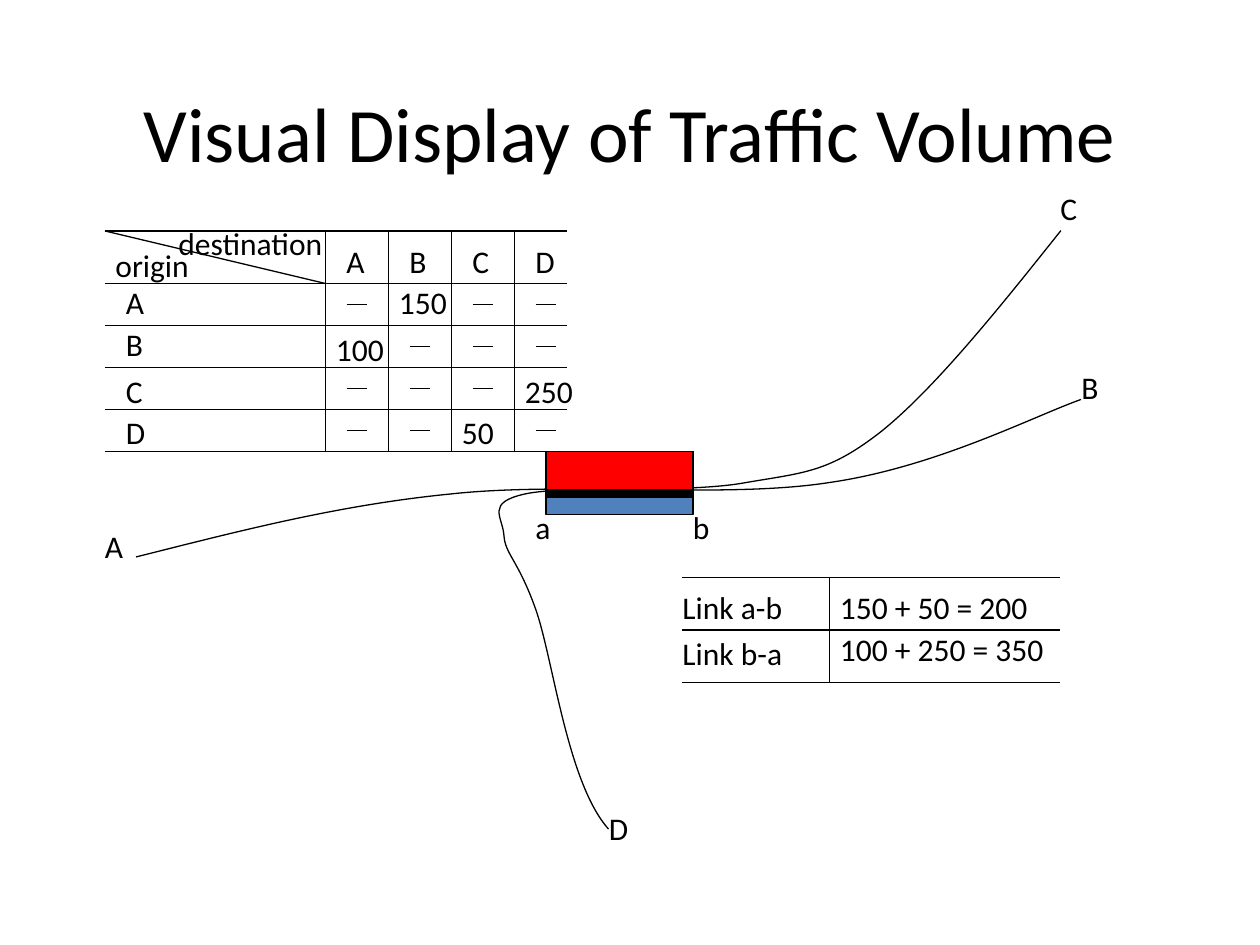
from lxml.etree import SubElement
from pptx import Presentation
from pptx.dml.color import RGBColor
from pptx.enum.shapes import MSO_CONNECTOR as Connector, MSO_SHAPE as Shape
from pptx.enum.text import MSO_ANCHOR as Anchor, MSO_AUTO_SIZE as AutoSize, PP_ALIGN as Align
from pptx.oxml.ns import qn
from pptx.util import Inches, Pt

COLORS = {"ink": "000000", "a_to_b": "4F81BD", "b_to_a": "FF0000"}
FONT = "Calibri"
ZONES = "ABCD"

# Trips by origin row; None is drawn as a dash
TRIPS = [
    [None, 150, None, None],
    [100, None, None, None],
    [None, None, None, 250],
    [None, None, 50, None],
]
LINK_VOLUMES = [
    ("Link a-b", 4.67, "150 + 50 = 200", 4.67),
    ("Link b-a", 5.03, "100 + 250 = 350", 5),
]
# Routes: a start point, then cubic segments (two controls and an end)
ROUTE_A_B = [
    (1.08, 4.42),
    (1.88, 4.22), (2.67, 4.01), (3.58, 3.92),
    (4.5, 3.82), (5.75, 3.96), (6.58, 3.83),
    (7.42, 3.71), (8.19, 3.31), (8.58, 3.17),
]
ROUTE_C_D = [
    (8.42, 1.83),
    (7.92, 2.46), (7.42, 3.08), (7, 3.42),
    (6.58, 3.75), (6.39, 3.75), (5.92, 3.83),
    (5.44, 3.92), (4.49, 3.85), (4.17, 3.92),
    (3.85, 3.99), (3.99, 4.1), (4, 4.25),
    (4.01, 4.4), (4.11, 4.44), (4.25, 4.83),
    (4.39, 5.22), (4.5, 6.21), (4.83, 6.58),
]
# Place labels: text, left, top, height
PLACES = [
    ("A", 0.83, 4.18, 0.4), ("B", 8.58, 2.92, 0.4),
    ("C", 8.42, 1.5, 0.4), ("D", 4.83, 6.42, 0.4),
    ("a", 4.25, 4.03, 0.3), ("b", 5.5, 4.03, 0.3),
]


def rgb(name):
    return RGBColor.from_string(COLORS[name])


def on_grid(length):
    """Snap a length in inches to the drawing grid of a twelfth of an inch."""
    return Inches(round(length * 12) / 12)


def set_line(line, width=0.75):
    line.color.rgb = rgb("ink")
    line.width = Pt(width)


def add_run(paragraph, text, size):
    run = paragraph.add_run()
    run.text = text
    run.font.name = FONT
    run.font.size = Pt(size)
    run.font.color.rgb = rgb("ink")


def add_title(slide, text):
    title = slide.shapes.add_textbox(Inches(0.75), Inches(0.42), Inches(8.5), Inches(1.25))
    frame = title.text_frame
    frame.word_wrap = True
    frame.vertical_anchor = Anchor.MIDDLE
    frame.paragraphs[0].alignment = Align.CENTER
    add_run(frame.paragraphs[0], text, 44)


def add_label(slide, text, left, top, width=0.5, height=0.3):
    label = slide.shapes.add_textbox(on_grid(left), Inches(top), Inches(width), Inches(height))
    frame = label.text_frame
    frame.word_wrap = True
    frame.auto_size = AutoSize.SHAPE_TO_FIT_TEXT
    frame.margin_left = frame.margin_right = frame.margin_top = frame.margin_bottom = 0
    add_run(frame.paragraphs[0], text, 18)


def add_rule(slide, x1, y1, x2, y2, width=0.75):
    ends = [on_grid(value) for value in (x1, y1, x2, y2)]
    rule = slide.shapes.add_connector(Connector.STRAIGHT, *ends)
    set_line(rule.line, width)
    SubElement(rule._element.spPr, qn("a:effectLst"))


def add_route(slide, route):
    start, *points = [(Inches(x), Inches(y)) for x, y in route]
    builder = slide.shapes.build_freeform(*start)
    builder.add_line_segments(points, close=False)
    curve = builder.convert_to_shape()
    curve.shadow.inherit = False
    curve.fill.background()
    set_line(curve.line)

    # Join every three points into one cubic segment
    outline = next(curve._element.iter(qn("a:path")))
    steps = outline.findall(qn("a:lnTo"))
    for i in range(0, len(steps), 3):
        segment = SubElement(outline, qn("a:cubicBezTo"))
        for step in steps[i:i + 3]:
            segment.append(step[0])
            outline.remove(step)


def add_volume_bar(slide, top, height, color):
    bar = slide.shapes.add_shape(
        Shape.RECTANGLE, on_grid(4.33), on_grid(top), on_grid(1.17), on_grid(height))
    bar.shadow.inherit = False
    bar.fill.solid()
    bar.fill.fore_color.rgb = rgb(color)
    set_line(bar.line)


def add_trip_matrix(slide):
    left, right, top, bottom = 0.83, 4.5, 1.83, 3.58
    columns = [2.58 + 0.5 * i for i in range(4)]
    rows = [2.25 + i / 3 for i in range(4)]

    # Grid and split header cell
    for y in [top, *rows, bottom]:
        add_rule(slide, left, y, right, y)
    for x in columns:
        add_rule(slide, x, top, x, bottom)
    add_rule(slide, left, top, columns[0], rows[0])
    add_label(slide, "origin", 0.92, 1.95, 0.67)
    add_label(slide, "destination", 1.42, 1.78, 1.25)

    # Zone headings
    row_label_tops = [2.25, 2.58, 2.95, 3.28]
    for zone, x, y in zip(ZONES, columns, row_label_tops):
        add_label(slide, zone, x + 0.17, 1.92)
        add_label(slide, zone, 1, y)

    # Trips
    trip_tops = [2.25, 2.62, 2.95, 3.28]
    for trips, row, trip_top in zip(TRIPS, rows, trip_tops):
        for trip, x in zip(trips, columns):
            if trip is None:
                add_rule(slide, x + 0.17, row + 0.17, x + 0.34, row + 0.17)
            else:
                add_label(slide, str(trip), x + 0.09, trip_top)


def add_link_totals(slide):
    for y in (4.58, 5, 5.42):
        add_rule(slide, 5.42, y, 8.42, y)
    add_rule(slide, 6.58, 4.58, 6.58, 5.42)
    for link, link_top, total, total_top in LINK_VOLUMES:
        add_label(slide, link, 5.42, link_top, 1.25)
        add_label(slide, total, 6.67, total_top, 1.75)


def main():
    deck = Presentation()
    deck.slide_width, deck.slide_height = Inches(10), Inches(7.5)
    slide = deck.slides.add_slide(deck.slide_layouts[6])
    add_title(slide, "Visual Display of Traffic Volume")

    # Road network
    for route in (ROUTE_A_B, ROUTE_C_D):
        add_route(slide, route)
    for x in (4.33, 5.5):
        add_rule(slide, x, 3.58, x, 4.08)
    for place, left, top, height in PLACES:
        add_label(slide, place, left, top, height=height)

    # Tables
    add_trip_matrix(slide)
    add_link_totals(slide)

    # Volumes on link a-b, in each direction
    add_volume_bar(slide, 3.92, 0.17, "a_to_b")
    add_volume_bar(slide, 3.58, 0.33, "b_to_a")
    add_rule(slide, 4.33, 3.92, 5.5, 3.92, 5)

    deck.save("out.pptx")


if __name__ == "__main__":
    main()
